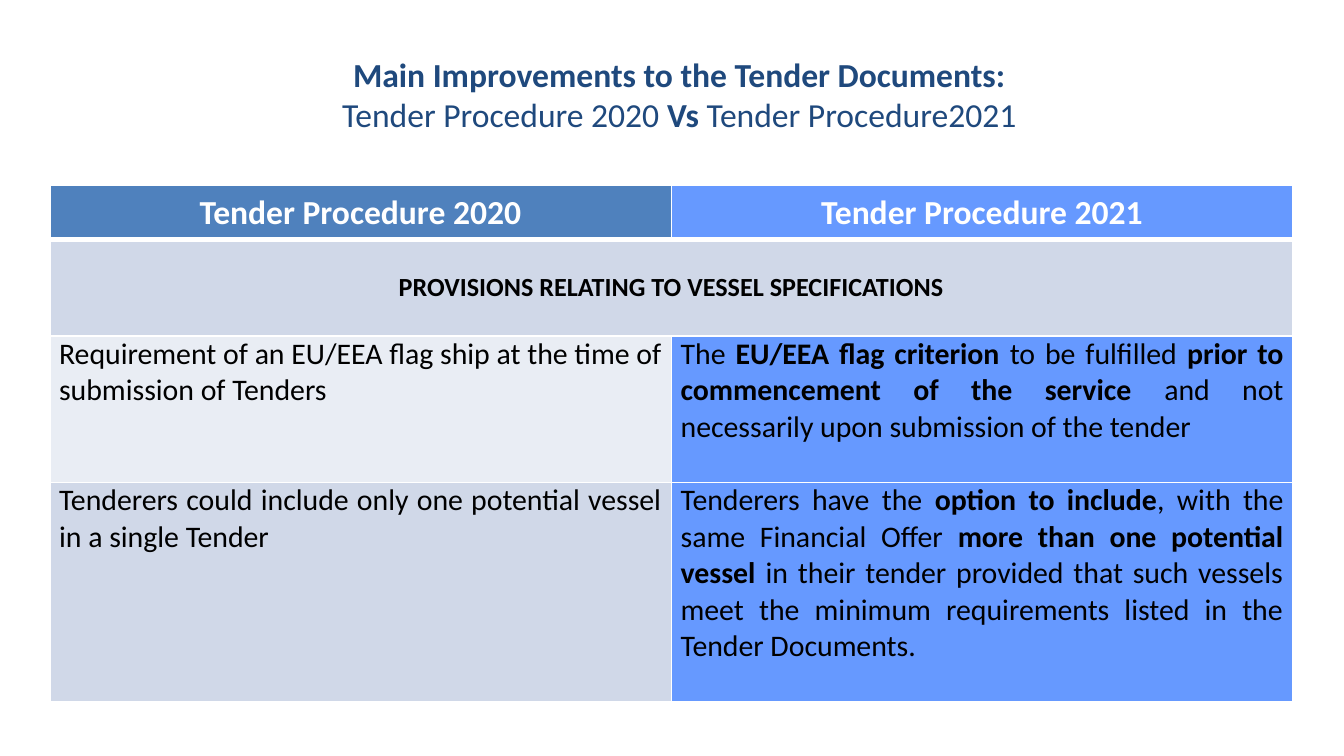
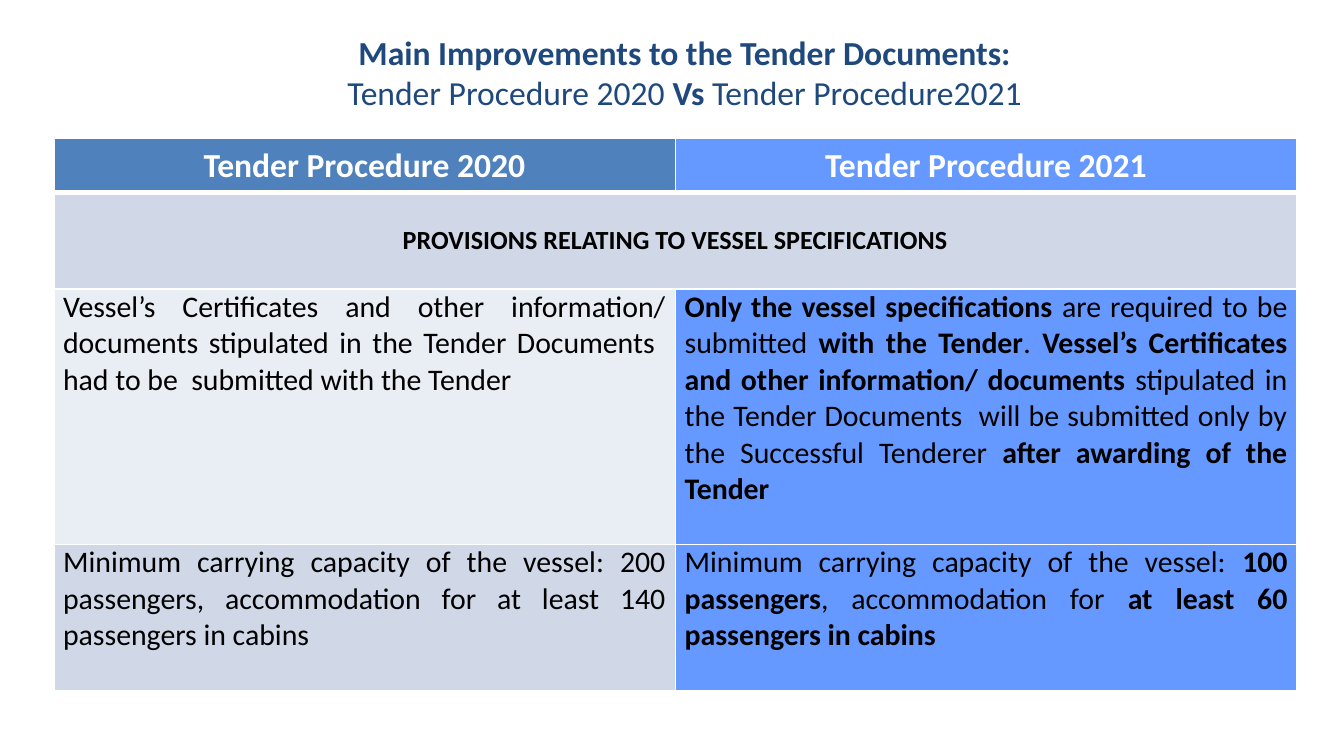
from lxml.etree import SubElement
from pptx import Presentation
from pptx.dml.color import RGBColor
from pptx.enum.text import MSO_ANCHOR, PP_ALIGN
from pptx.oxml.ns import qn
from pptx.util import Inches, Pt

NAVY = RGBColor(0x1F, 0x49, 0x7D)
STEEL = RGBColor(0x4F, 0x81, 0xBD)
BLUE = RGBColor(0x66, 0x99, 0xFF)
GREY = RGBColor(0xD0, 0xD8, 0xE8)
PALE = RGBColor(0xE9, 0xED, 0xF4)
WHITE = RGBColor(0xFF, 0xFF, 0xFF)
BLACK = RGBColor(0, 0, 0)

TITLE = "*Main Improvements to the Tender Documents:*\nTender Procedure 2020 *Vs* Tender Procedure2021"
HEAD = ["*Tender Procedure 2020*", "*Tender Procedure 2021*"]
BAND = ["*PROVISIONS RELATING TO VESSEL SPECIFICATIONS*", ""]

LOOKS = [
    {"size": 18, "color": WHITE, "align": PP_ALIGN.CENTER, "fills": (STEEL, BLUE), "top": 1, "base": 3},
    {"size": 14, "color": BLACK, "align": PP_ALIGN.CENTER, "fills": (GREY, GREY), "top": 3, "base": 1},
    {"size": 16, "color": BLACK, "align": PP_ALIGN.JUSTIFY, "fills": (PALE, BLUE), "top": 1, "base": 1},
    {"size": 16, "color": BLACK, "align": PP_ALIGN.JUSTIFY, "fills": (GREY, BLUE), "top": 1, "base": 1},
]
INSET = {
    "margin_left": Inches(0.07),
    "margin_right": Inches(0.07),
    "margin_top": 0,
    "margin_bottom": 0,
}

PAGES = [
    {
        "title": (0.5, 0.23, 9.11, 0.94),
        "table": (0.37, 1.38),
        "rows": (0.4, 0.72, 1.09, 1.63),
        "body": [
            [
                "Requirement of an EU/ΕΕΑ flag ship at the time of submission of Tenders",
                "The *EU/ΕΕΑ flag criterion *to be fulfilled *prior to commencement of the service *"
                "and not necessarily upon submission of the tender",
            ],
            [
                "Tenderers could include only one potential vessel in a single Tender",
                "Tenderers have the *option to include*, with the same Financial Offer "
                "*more than one potential vessel *in their tender provided that such vessels "
                "meet the minimum requirements listed in the Tender Documents.",
            ],
        ],
    },
    {
        "title": (0.54, 0.12, 9.11, 0.83),
        "table": (0.4, 1.03),
        "rows": (0.4, 0.72, 1.9, 1.09),
        "body": [
            [
                "Vessel’s Certificates and other information/ documents stipulated in the "
                "Tender Documents  had to be  submitted with the Tender",
                "*Only the vessel specifications *are required to be submitted *with the Tender*. "
                "*Vessel’s Certificates and other information/ documents *stipulated in the "
                "Tender Documents  will be submitted only by the Successful Tenderer "
                "*after awarding of the Tender*",
            ],
            [
                "Minimum carrying capacity of the vessel: 200 passengers, accommodation "
                "for at least 140 passengers in cabins",
                "Minimum carrying capacity of the vessel: *100 passengers*, accommodation "
                "for *at least 60 passengers in cabins*",
            ],
        ],
    },
]


def write(frame, text, size, color, align):
    para = frame.paragraphs[0]
    para.alignment = align
    for row, line in enumerate(text.split("\n")):
        if row:
            para.add_line_break()
        for turn, part in enumerate(line.split("*")):
            if part:
                run = para.add_run()
                run.text = part
                font = {"name": "Calibri", "size": Pt(size), "bold": turn % 2 == 1}
                for key, value in font.items():
                    setattr(run.font, key, value)
                run.font.color.rgb = color


def edge(cell, top, base):
    props = cell._tc.get_or_add_tcPr()
    sides = {"a:lnL": 1, "a:lnR": 1, "a:lnT": top, "a:lnB": base}
    for spot, (tag, width) in enumerate(sides.items()):
        line = SubElement(props, qn(tag), w=str(Pt(width)))
        fill = SubElement(line, qn("a:solidFill"))
        SubElement(fill, qn("a:srgbClr"), val=str(WHITE))
        props.insert(spot, line)


deck = Presentation()
deck.slide_width = Inches(10)
deck.slide_height = deck.slide_width * 9 // 16

for page in PAGES:
    slide = deck.slides.add_slide(deck.slide_layouts[6])

    frame = slide.shapes.add_textbox(*map(Inches, page["title"])).text_frame
    frame.word_wrap = True
    frame.vertical_anchor = MSO_ANCHOR.MIDDLE
    write(frame, TITLE, 18, NAVY, PP_ALIGN.CENTER)

    rows = page["rows"]
    place = (*page["table"], 9.25, sum(rows))
    table = slide.shapes.add_table(len(rows), 2, *map(Inches, place)).table
    table.first_row = False
    table.horz_banding = False
    table.cell(1, 0).merge(table.cell(1, 1))

    for row, texts in enumerate([HEAD, BAND, *page["body"]]):
        look = LOOKS[row]
        table.rows[row].height = Inches(rows[row])
        for col, text in enumerate(texts):
            cell = table.cell(row, col)
            cell.fill.solid()
            cell.fill.fore_color.rgb = look["fills"][col]
            edge(cell, look["top"], look["base"])
            if row:
                for key, value in INSET.items():
                    setattr(cell, key, value)
            if row == 1:
                cell.vertical_anchor = MSO_ANCHOR.MIDDLE
            write(cell.text_frame, text, look["size"], look["color"], look["align"])

deck.save("out.pptx")
